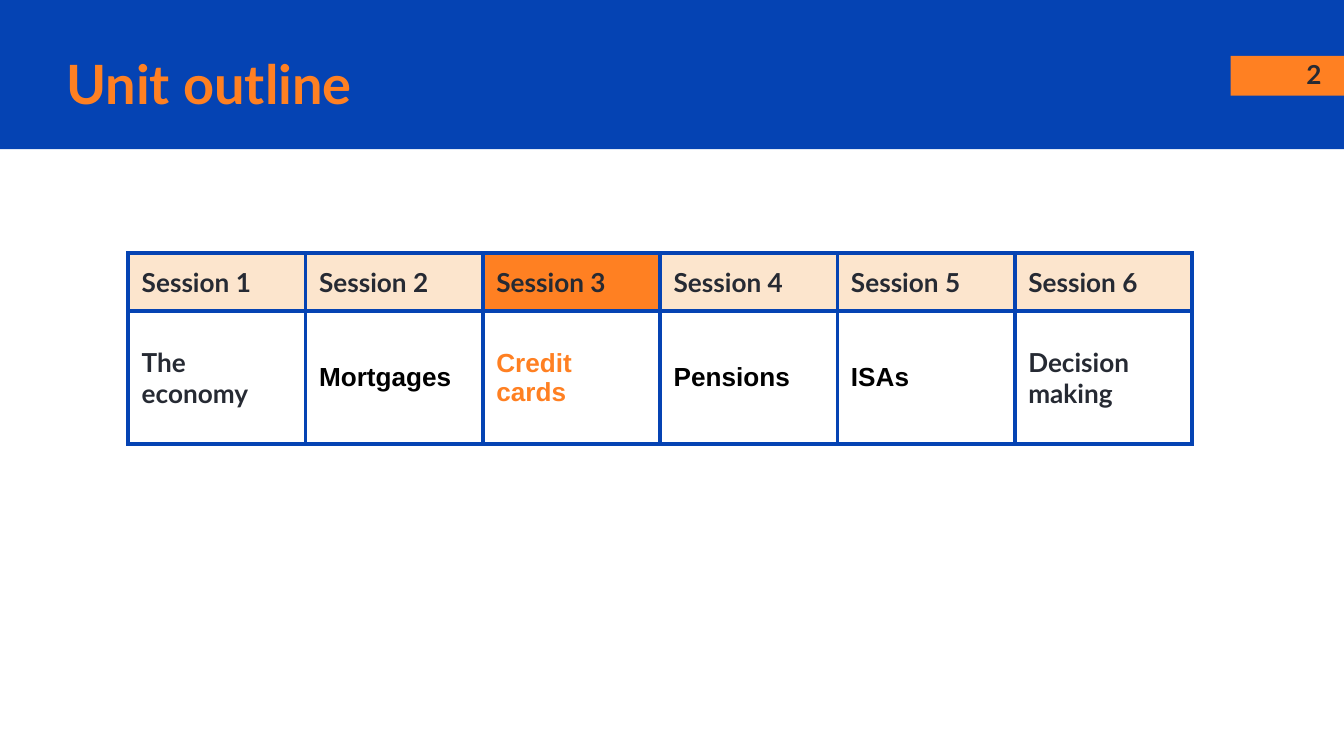
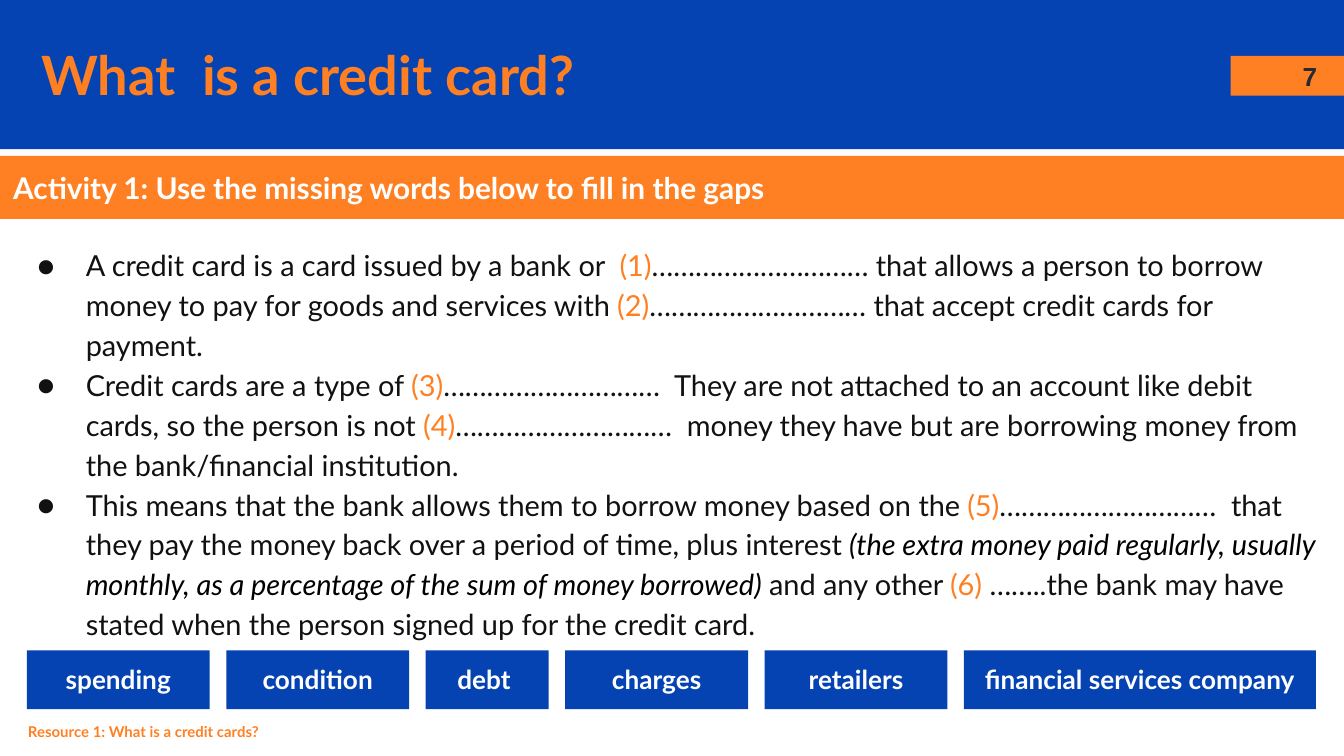
from dataclasses import dataclass

from lxml.etree import SubElement
from pptx import Presentation
from pptx.dml.color import RGBColor
from pptx.enum.shapes import MSO_SHAPE
from pptx.enum.text import MSO_ANCHOR, PP_ALIGN
from pptx.oxml.ns import qn
from pptx.util import Pt


@dataclass(frozen=True)
class Theme:
    blue: str = "0543B3"
    orange: str = "FF8022"
    peach: str = "FCE5CD"
    white: str = "FFFFFF"
    black: str = "000000"
    dark: str = "262A33"
    body: str = "111111"
    font: str = "Lato"
    alt_font: str = "Arial"
    title_size: float = 29
    banner_size: float = 16
    body_size: float = 15.5
    label_size: float = 14
    note_size: float = 8
    inset: float = 7.2
    border: float = 2.25


T = Theme()
WIDTH, HEIGHT = 720, 405
GAP = "…" * 10

SESSIONS = [
    ("The economy", T.font, T.dark),
    ("Mortgages", T.alt_font, T.black),
    ("Credit cards", T.alt_font, T.orange),
    ("Pensions", T.alt_font, T.black),
    ("ISAs", T.alt_font, T.black),
    ("Decision making", T.font, T.dark),
]
CURRENT_SESSION = 3

# Each run is its text and its style: plain, number or aside.
GAP_TEXT = [
    [("A credit card is a card issued by a bank or  ", "plain"),
     ("(1)", "number"),
     (GAP + " that allows a person to borrow money to pay for goods and "
      "services with ", "plain"),
     ("(2)", "number"),
     (GAP + " that accept credit cards for payment.", "plain")],
    [("Credit cards are a type of ", "plain"),
     ("(3)", "number"),
     (GAP + "  They are not attached to an account like debit cards, so the "
      "person is not ", "plain"),
     ("(4)", "number"),
     (GAP + "  money they have but are borrowing money from the "
      "bank/financial institution.", "plain")],
    [("This means that the bank allows them to borrow money based on the ",
      "plain"),
     ("(5)", "number"),
     (GAP + "  that they pay the money back over a period of time, plus "
      "interest ", "plain"),
     ("(the extra money paid regularly, usually monthly, as a percentage of "
      "the sum of money borrowed)", "aside"),
     (" and any other ", "plain"),
     ("(6)", "number"),
     (" ……..the bank may have stated when the person signed up for the "
      "credit card.", "plain")],
]
RUN_COLORS = {"plain": T.body, "number": T.orange, "aside": T.black}

WORD_BANK = [("spending", 98), ("condition", 98), ("debt ", 66),
             ("charges", 98), ("retailers", 98),
             ("financial services company", 188.6)]


def rgb(color):
    return RGBColor.from_string(color)


def style_run(r, size, color, font=T.font, bold=True, italic=False):
    r.font.name, r.font.size = font, Pt(size)
    r.font.bold, r.font.italic = bold, italic
    r.font.color.rgb = rgb(color)


def set_frame(tf, anchor):
    tf.word_wrap = True
    tf.vertical_anchor = anchor
    tf.margin_left = tf.margin_right = Pt(T.inset)
    tf.margin_top = tf.margin_bottom = Pt(T.inset)


def write(tf, text, size, color, font=T.font, align=PP_ALIGN.LEFT,
          anchor=MSO_ANCHOR.TOP):
    """Fill a frame with one bold paragraph."""
    set_frame(tf, anchor)
    tf.text = text
    p = tf.paragraphs[0]
    p.alignment = align
    style_run(p.runs[0], size, color, font)


def add_box(s, x, y, w, h, color):
    sp = s.shapes.add_shape(MSO_SHAPE.RECTANGLE, Pt(x), Pt(y), Pt(w), Pt(h))
    sp.shadow.inherit = False
    sp.fill.solid()
    sp.fill.fore_color.rgb = rgb(color)
    sp.line.fill.background()
    return sp


def add_text(s, x, y, w, h, text, size, color, **style):
    sp = s.shapes.add_textbox(Pt(x), Pt(y), Pt(w), Pt(h))
    write(sp.text_frame, text, size, color, **style)


def add_slide(prs, title, title_x, title_y):
    """Add a slide with the blue band, the number tab and its title."""
    s = prs.slides.add_slide(prs.slide_layouts[6])
    add_box(s, 0, 0, WIDTH, 80, T.blue)
    add_box(s, 659.3, 30, 60.7, 21.3, T.orange)
    add_text(s, title_x, title_y, 609, 40, title, T.title_size, T.orange,
             anchor=MSO_ANCHOR.MIDDLE)
    return s


def set_borders(cell):
    tcPr = cell._tc.get_or_add_tcPr()
    for i, side in enumerate(("lnL", "lnR", "lnT", "lnB")):
        ln = tcPr.makeelement(qn(f"a:{side}"), {"w": str(Pt(T.border))})
        fill = SubElement(ln, qn("a:solidFill"))
        SubElement(fill, qn("a:srgbClr"), val=T.blue)
        tcPr.insert(i, ln)


def add_session_table(s, x, y, col_width, row_heights):
    count = len(SESSIONS)
    frame = s.shapes.add_table(len(row_heights), count, Pt(x), Pt(y),
                               Pt(col_width * count), Pt(sum(row_heights)))
    table = frame.table
    table.first_row = table.horz_banding = False
    for row, height in zip(table.rows, row_heights):
        row.height = Pt(height)
    for i, (topic, font, color) in enumerate(SESSIONS):
        table.columns[i].width = Pt(col_width)
        head, body = table.cell(0, i), table.cell(1, i)
        write(head.text_frame, f"Session {i + 1}", T.label_size, T.dark)
        write(body.text_frame, topic, T.label_size, color, font)
        body.vertical_anchor = MSO_ANCHOR.MIDDLE
        head.fill.solid()
        current = i + 1 == CURRENT_SESSION
        head.fill.fore_color.rgb = rgb(T.orange if current else T.peach)
        body.fill.background()
        for cell in (head, body):
            cell.margin_left = cell.margin_right = Pt(T.inset)
            cell.margin_top = cell.margin_bottom = Pt(T.inset)
            set_borders(cell)


def add_bullet(p, indent, hanging):
    pPr = p._p.get_or_add_pPr()
    pPr.set("marL", str(Pt(indent)))
    pPr.set("indent", str(-Pt(hanging)))
    color = SubElement(pPr, qn("a:buClr"))
    SubElement(color, qn("a:srgbClr"), val=T.body)
    SubElement(pPr, qn("a:buFont"), typeface=T.font)
    SubElement(pPr, qn("a:buChar"), char="●")


def add_gap_text(s, x, y, w, h):
    tf = s.shapes.add_textbox(Pt(x), Pt(y), Pt(w), Pt(h)).text_frame
    set_frame(tf, MSO_ANCHOR.TOP)
    for i, runs in enumerate(GAP_TEXT):
        p = tf.add_paragraph() if i else tf.paragraphs[0]
        add_bullet(p, 36, 25.9)
        p.line_spacing = 1.15
        for text, kind in runs:
            r = p.add_run()
            r.text = text
            style_run(r, T.body_size, RUN_COLORS[kind], bold=False,
                      italic=kind == "aside")


def add_word_bank(s, x, y, h, gap):
    for word, width in WORD_BANK:
        sp = add_box(s, x, y, width, h, T.blue)
        write(sp.text_frame, word, T.label_size, T.white,
              align=PP_ALIGN.CENTER)
        x += width + gap


def build_outline(prs):
    s = add_slide(prs, "Unit outline", 28.5, 24.4)
    add_text(s, 676.8, 24.1, 38.2, 31, "2", T.label_size, T.dark,
             align=PP_ALIGN.RIGHT)
    add_session_table(s, 68.7, 135.5, 95, (31, 71.3))


def build_activity(prs):
    s = add_slide(prs, "What  is a credit card?", 15.1, 19.6)
    add_text(s, 683.3, 31.7, 37, 18, "7", T.label_size, T.dark,
             font=T.alt_font, align=PP_ALIGN.CENTER, anchor=MSO_ANCHOR.MIDDLE)
    banner = add_box(s, 0, 83.5, WIDTH, 33.8, T.orange)
    write(banner.text_frame,
          "Activity 1: Use the missing words below to fill in the gaps",
          T.banner_size, T.white)
    add_gap_text(s, 2.9, 122.8, 717.1, 227.5)
    add_word_bank(s, 14.4, 348.4, 31.5, 8.8)
    add_text(s, 7.9, 382.3, 328.3, 24.5, "Resource 1: What is a credit cards?",
             T.note_size, T.orange)


def main():
    prs = Presentation()
    prs.slide_width, prs.slide_height = Pt(WIDTH), Pt(HEIGHT)
    build_outline(prs)
    build_activity(prs)
    prs.save("out.pptx")


if __name__ == "__main__":
    main()
